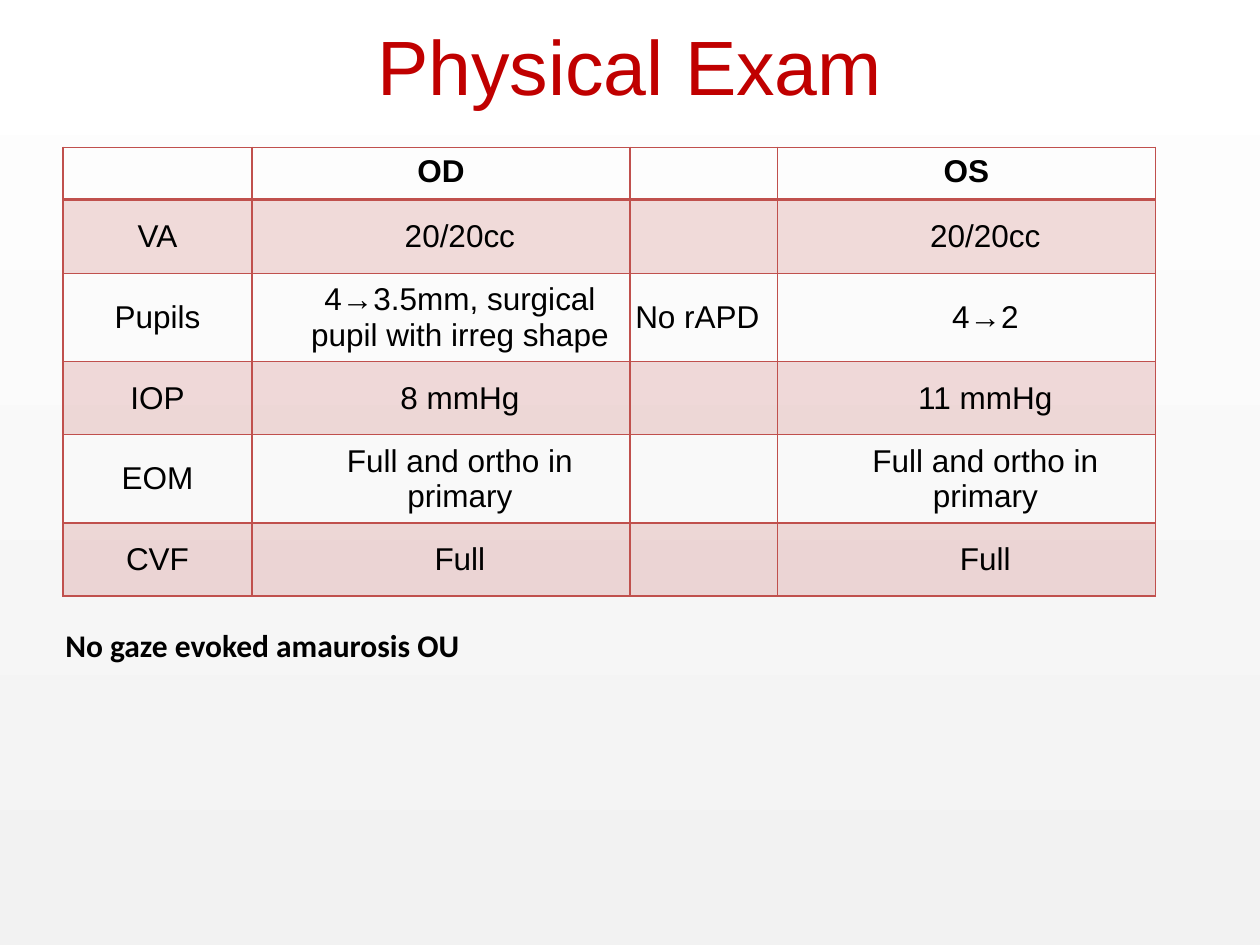
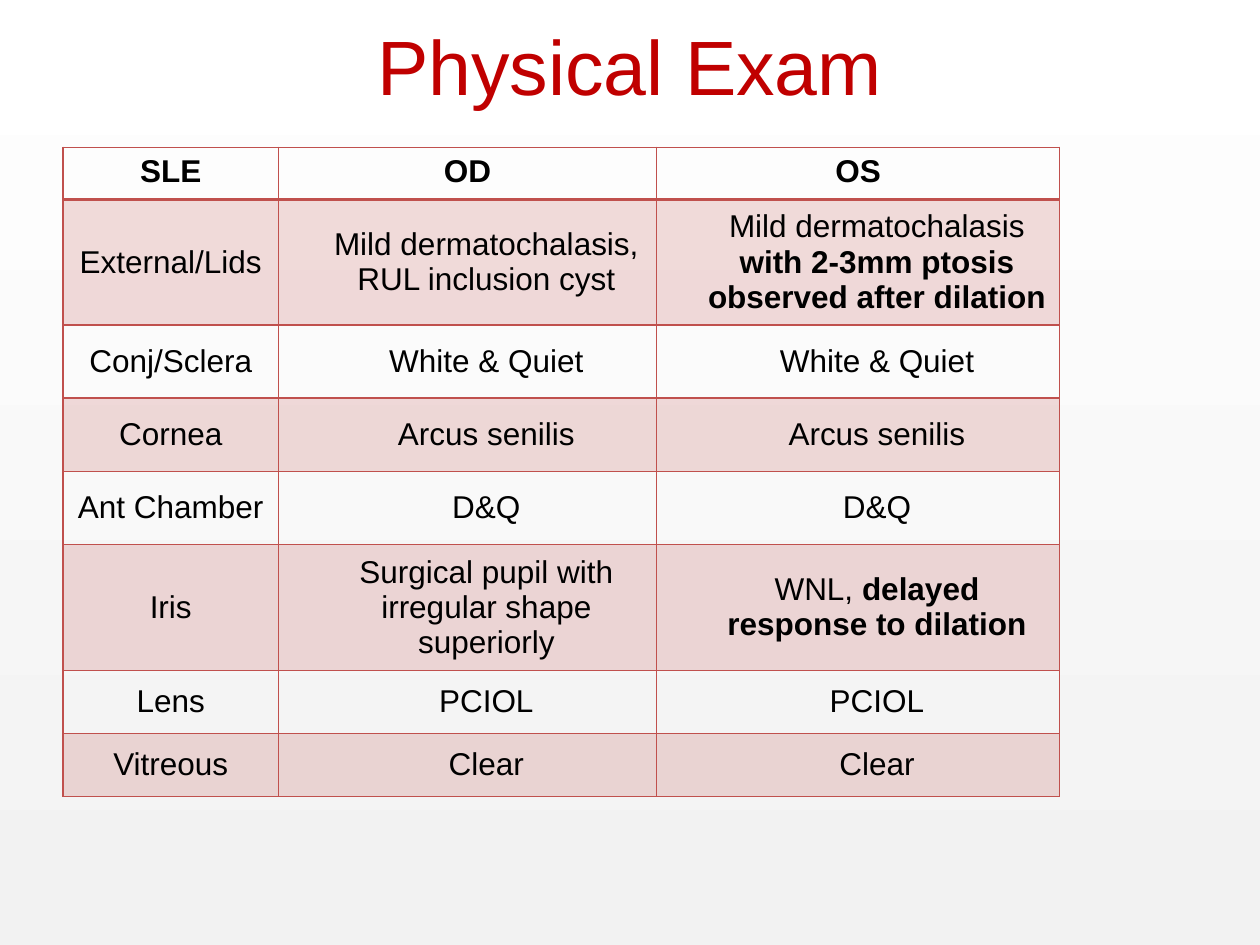
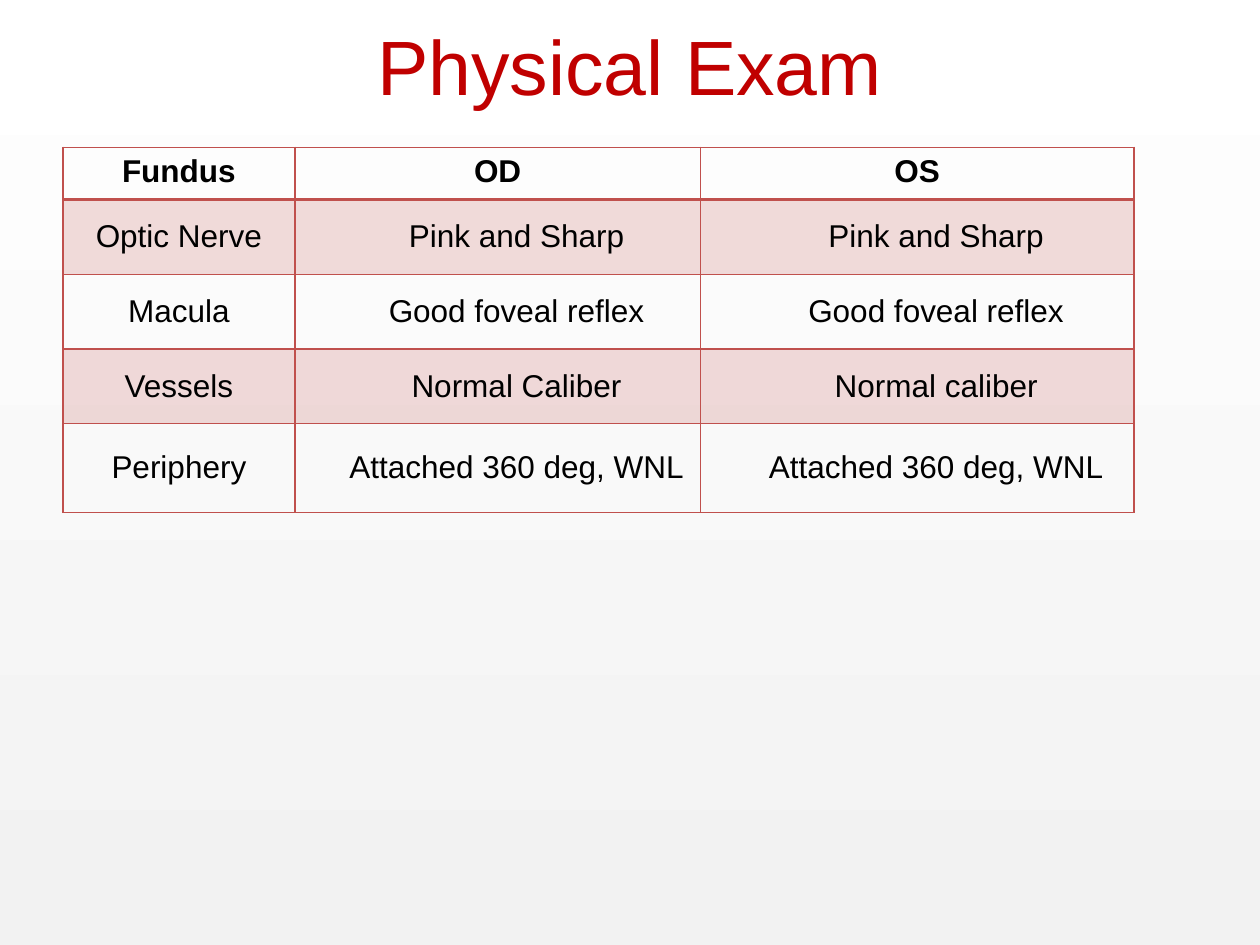
from dataclasses import dataclass

from lxml import etree
from pptx import Presentation
from pptx.dml import color
from pptx.enum import text
from pptx.oxml import ns
from pptx.util import Inches, Pt


@dataclass(frozen=True)
class Theme:
    title: color.RGBColor = color.RGBColor.from_string("C00000")
    ink: color.RGBColor = color.RGBColor.from_string("000000")
    accent: color.RGBColor = color.RGBColor.from_string("C0504D")
    page_bottom: color.RGBColor = color.RGBColor.from_string("F2F2F2")
    page_top: color.RGBColor = color.RGBColor.from_string("FFFFFF")
    band_alpha: int = 20
    font: str = "Arial"
    note_font: str = "Calibri"
    title_size: int = 44
    body_size: int = 18
    rule: int = 1
    header_rule: int = 2


theme = Theme()


def add_run(paragraph, words, size, ink, bold=False, font=theme.font):
    run = paragraph.add_run()
    run.text = words
    run.font.name = font
    run.font.size = Pt(size)
    run.font.bold = bold
    run.font.color.rgb = ink


def add_border(cell_properties, side, width):
    line = etree.SubElement(cell_properties, ns.qn(f"a:ln{side}"), w=str(Pt(width)))
    fill = etree.SubElement(line, ns.qn("a:solidFill"))
    etree.SubElement(fill, ns.qn("a:srgbClr"), val=str(theme.accent))


# Findings: a pair in a cell is plain words followed by bold words
exams = [
    {
        "widths": [1.5, 3, 1.17, 3],
        "heights": [0.41, 0.59, 0.58, 0.58, 0.58, 0.58],
        "indents": [0.1, 0.4, 0, 0.4],
        "findings": [
            ["", "OD", "", "OS"],
            ["VA", "20/20cc", "", "20/20cc"],
            ["Pupils", "4→3.5mm, surgical pupil with irreg shape", "No rAPD", "4→2"],
            ["IOP", "8 mmHg", "", "11 mmHg"],
            ["EOM", "Full and ortho in primary", "", "Full and ortho in primary"],
            ["CVF", "Full", "", "Full"],
        ],
        "note": "No gaze evoked amaurosis OU",
    },
    {
        "widths": [1.71, 3, 3.2],
        "heights": [0.41, 0.59, 0.58, 0.58, 0.58, 0.58, 0.5, 0.5],
        "indents": [0.1, 0.4, 0.4],
        "findings": [
            ["SLE", "OD", "OS"],
            ["External/Lids", "Mild dermatochalasis, RUL inclusion cyst",
             ("Mild dermatochalasis ", "with 2-3mm ptosis observed after dilation")],
            ["Conj/Sclera", "White & Quiet", "White & Quiet"],
            ["Cornea", "Arcus senilis", "Arcus senilis"],
            ["Ant Chamber", "D&Q", "D&Q"],
            ["Iris", "Surgical pupil with irregular shape superiorly",
             ("WNL, ", "delayed response to dilation")],
            ["Lens", "PCIOL", "PCIOL"],
            ["Vitreous", "Clear", "Clear"],
        ],
    },
    {
        "widths": [1.84, 3.22, 3.44],
        "heights": [0.41, 0.6, 0.59, 0.59, 0.71],
        "indents": [0.1, 0.4, 0.4],
        "findings": [
            ["Fundus", "OD", "OS"],
            ["Optic Nerve", "Pink and Sharp", "Pink and Sharp"],
            ["Macula", "Good foveal reflex", "Good foveal reflex"],
            ["Vessels", "Normal Caliber", "Normal caliber"],
            ["Periphery", "Attached 360 deg, WNL", "Attached 360 deg, WNL"],
        ],
    },
]

deck = Presentation()
deck.slide_width, deck.slide_height = Inches(10), Inches(7.5)

# Shared page gradient, light grey at the foot to white at the top
page = deck.slide_master.background.fill
page.gradient()
page.gradient_angle = 90
for stop, tint in zip(page.gradient_stops, (theme.page_bottom, theme.page_top)):
    stop.color.rgb = tint

for exam in exams:
    slide = deck.slides.add_slide(deck.slide_layouts[6])

    # Title
    heading = slide.shapes.add_textbox(Inches(0.5), Inches(-0.11), Inches(9), Inches(1.25)).text_frame
    heading.word_wrap = True
    heading.vertical_anchor = text.MSO_ANCHOR.MIDDLE
    heading.paragraphs[0].alignment = text.PP_ALIGN.CENTER
    add_run(heading.paragraphs[0], "Physical Exam", theme.title_size, theme.title)

    # Findings table
    findings, widths, heights = exam["findings"], exam["widths"], exam["heights"]
    grid = slide.shapes.add_table(
        len(heights), len(widths), Inches(0.5), Inches(1.17),
        Inches(sum(widths)), Inches(sum(heights))).table
    grid.first_row = grid.horz_banding = False
    for column, width in zip(grid.columns, widths):
        column.width = Inches(width)
    for row, height in zip(grid.rows, heights):
        row.height = Inches(height)

    for r, row_findings in enumerate(findings):
        is_header = r == 0
        for c, finding in enumerate(row_findings):
            cell = grid.cell(r, c)

            # Borders, heavier under the header
            properties = cell._tc.get_or_add_tcPr()
            for side in "LRTB":
                under_header = (r, side) in ((0, "B"), (1, "T"))
                add_border(properties, side, theme.header_rule if under_header else theme.rule)

            # Tinted bands on odd rows
            if r % 2:
                cell.fill.solid()
                cell.fill.fore_color.rgb = theme.accent
                tint = properties.find(ns.qn("a:solidFill"))[0]
                etree.SubElement(tint, ns.qn("a:alpha"), val=str(theme.band_alpha * 1000))
            else:
                cell.fill.background()

            # Words
            if not is_header:
                cell.vertical_anchor = text.MSO_ANCHOR.MIDDLE
                cell.margin_left = Inches(exam["indents"][c])
            paragraph = cell.text_frame.paragraphs[0]
            paragraph.alignment = text.PP_ALIGN.CENTER
            plain, strong = finding if isinstance(finding, tuple) else (finding, "")
            for words, bold in ((plain, is_header), (strong, True)):
                if words:
                    add_run(paragraph, words, theme.body_size, theme.ink, bold)

    # Note under the table
    if "note" in exam:
        note = slide.shapes.add_textbox(Inches(0.42), Inches(4.92), Inches(3.67), Inches(0.4)).text_frame
        note.word_wrap = True
        add_run(note.paragraphs[0], exam["note"], theme.body_size, theme.ink, True, theme.note_font)

deck.save("out.pptx")
